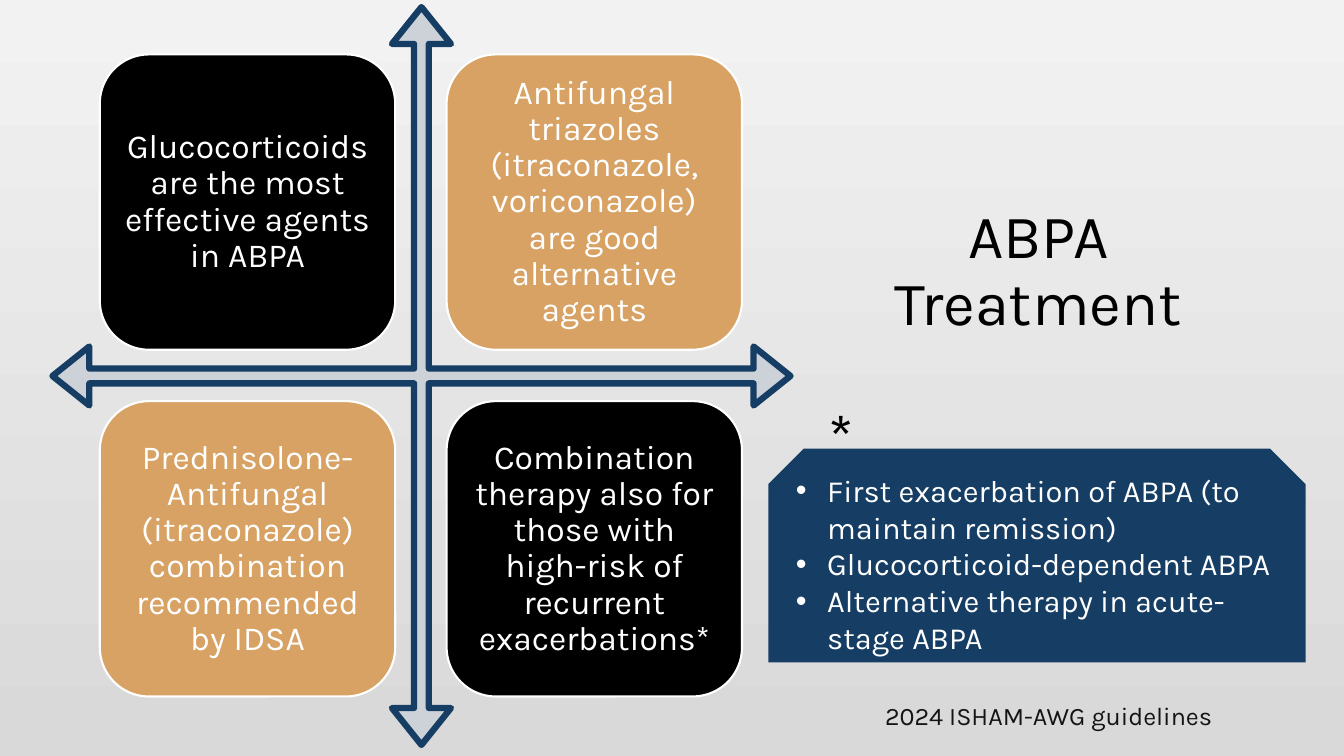
from lxml import etree
from pptx import Presentation
from pptx.dml.color import RGBColor
from pptx.enum.shapes import MSO_SHAPE
from pptx.enum.text import MSO_ANCHOR, MSO_AUTO_SIZE, PP_ALIGN
from pptx.oxml.ns import qn
from pptx.util import Inches, Pt

CENTER, LEFT = PP_ALIGN.CENTER, PP_ALIGN.LEFT
MIDDLE, TOP = MSO_ANCHOR.MIDDLE, MSO_ANCHOR.TOP
COLORS = {
    "black": "000000", "white": "FFFFFF", "tan": "D7A263", "navy": "163E64",
    "arrow": "CCD2D8", "ink": "141413", "light": "F2F2F2", "shade": "D9D9D9",
}
FONT = "Karla"


def color(name):
    return RGBColor.from_string(COLORS[name])


def write(box, lines, size, ink, align=LEFT, anchor=TOP, spacing=1.0, inset=None, bullet=None):
    frame = box.text_frame
    frame.word_wrap = True
    frame.auto_size = MSO_AUTO_SIZE.NONE
    frame.vertical_anchor = anchor
    if inset is not None:
        frame.margin_left = frame.margin_right = Inches(inset)
        frame.margin_top = frame.margin_bottom = Inches(inset)
    for index, line in enumerate(lines):
        para = frame.add_paragraph() if index else frame.paragraphs[0]
        para.alignment = align
        para.line_spacing = spacing
        span = para.add_run()
        span.text = line
        span.font.name = FONT
        span.font.size = Pt(size)
        span.font.color.rgb = color(ink)
        if bullet:
            properties = para._p.get_or_add_pPr()
            properties.set("marL", str(Inches(0.31)))
            properties.set("indent", str(-Inches(0.31)))
            etree.SubElement(properties, qn("a:buFont"), typeface="Arial")
            etree.SubElement(properties, qn("a:buChar"), char=bullet)


deck = Presentation()
deck.slide_width, deck.slide_height = Inches(13.33), Inches(7.5)
page = deck.slides.add_slide(deck.slide_layouts[5])

backdrop = page.background.fill
backdrop.gradient()
backdrop.gradient_angle = 270
for stop, name, position in zip(backdrop.gradient_stops, ("light", "shade"), (0, 0.99)):
    stop.color.rgb = color(name)
    stop.position = position

title = page.shapes.title
title.left, title.top = Inches(8.58), Inches(1.24)
title.width, title.height = Inches(3.44), Inches(2.92)
write(title, ["ABPA Treatment"], 44, "black", align=CENTER, anchor=MIDDLE, spacing=0.9)

arrows = page.shapes.add_shape(
    MSO_SHAPE.QUAD_ARROW, Inches(0.52), Inches(0.07), Inches(7.32), Inches(7.32))
arrows.shadow.inherit = False
for index, share in enumerate((0.02, 0.04, 0.05)):
    arrows.adjustments[index] = share
arrows.fill.solid()
arrows.fill.fore_color.rgb = color("arrow")
arrows.line.color.rgb = color("navy")
arrows.line.width = Pt(4.5)

treatments = [
    "Glucocorticoids are the most effective agents in ABPA",
    "Antifungal triazoles (itraconazole, voriconazole) are good alternative agents",
    "Prednisolone-Antifungal (itraconazole) combination recommended by IDSA",
    "Combination therapy also for those with high-risk of recurrent exacerbations*",
]
card_size, card_step = 2.93, 3.44
for index, treatment in enumerate(treatments):
    row, column = divmod(index, 2)
    card = page.shapes.add_shape(
        MSO_SHAPE.ROUNDED_RECTANGLE,
        Inches(0.99 + column * card_step), Inches(0.54 + row * card_step),
        Inches(card_size), Inches(card_size))
    card.shadow.inherit = False
    card.fill.solid()
    card.fill.fore_color.rgb = color("black" if row == column else "tan")
    card.line.color.rgb = color("white")
    card.line.width = Pt(1.5)
    write(card, [treatment], 24, "white", align=CENTER, anchor=MIDDLE, spacing=0.9, inset=0.1)

indications = page.shapes.add_shape(
    MSO_SHAPE.SNIP_2_SAME_RECTANGLE, Inches(7.62), Inches(4.45), Inches(5.33), Inches(2.12))
indications.shadow.inherit = False
indications.fill.solid()
indications.fill.fore_color.rgb = color("navy")
indications.line.fill.background()
write(indications, [
    "First exacerbation of ABPA (to maintain remission)",
    "Glucocorticoid-dependent ABPA",
    "Alternative therapy in acute-stage ABPA",
], 22, "white", bullet="•")

asterisk = page.shapes.add_textbox(Inches(8.12), Inches(3.89), Inches(0.65), Inches(0.84))
write(asterisk, ["*"], 44, "black")

citation = page.shapes.add_textbox(Inches(8.68), Inches(6.9), Inches(3.73), Inches(0.4))
write(citation, ["2024 ISHAM-AWG guidelines"], 18, "ink")

deck.save("out.pptx")
